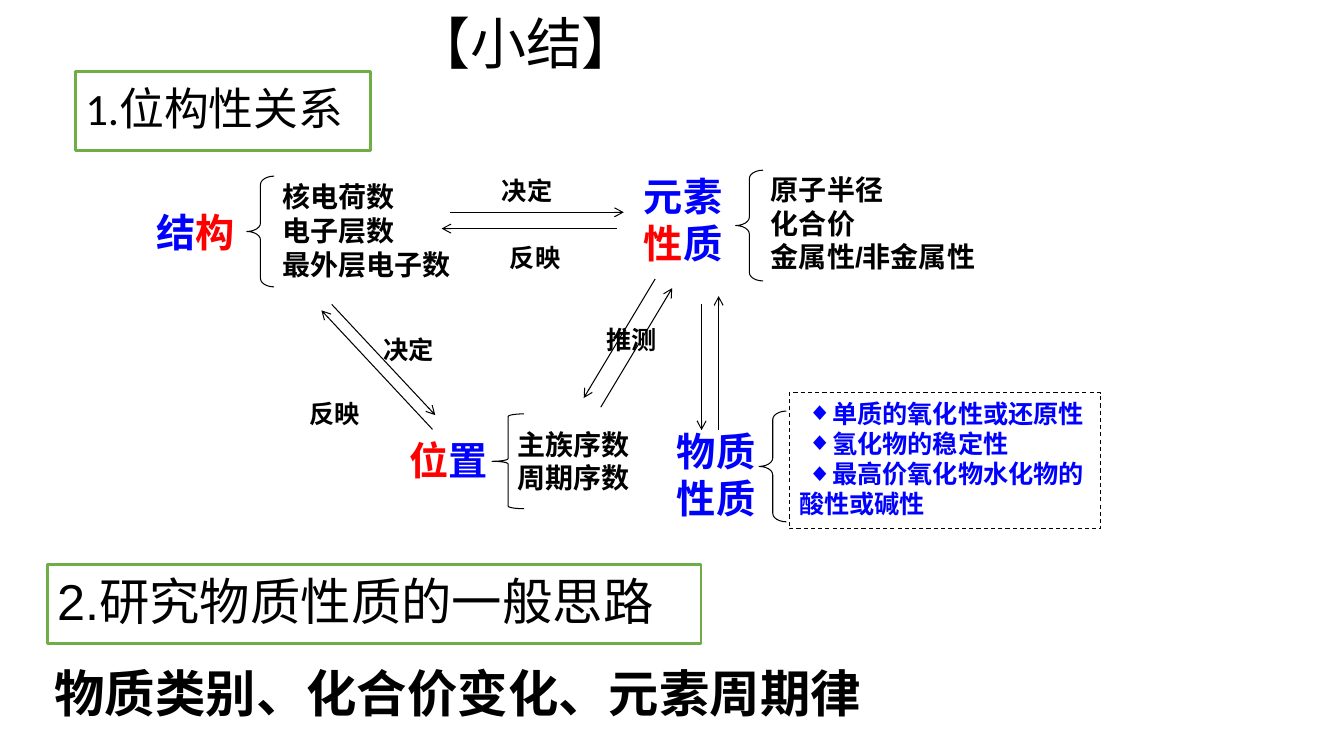
from lxml.etree import SubElement
from pptx import Presentation
from pptx.dml.color import RGBColor
from pptx.enum.dml import MSO_LINE
from pptx.enum.shapes import MSO_CONNECTOR, MSO_SHAPE
from pptx.enum.text import MSO_ANCHOR, MSO_AUTO_SIZE, PP_ALIGN
from pptx.oxml.ns import qn
from pptx.util import Cm, Pt

BLACK, WHITE, BLUE, RED, GREEN = "000000", "FFFFFF", "0000FF", "FF0000", "70AD47"


def rgb(hex_color):
    return RGBColor.from_string(hex_color)


def place(sp, x, y, w, h):
    sp.left, sp.top, sp.width, sp.height = Cm(x), Cm(y), Cm(w), Cm(h)


def write(tf, lines, size, font="Arial", bold=False, spacing=None, align=PP_ALIGN.LEFT):
    """Each line is a list of (text, colour) runs."""
    for i, runs in enumerate(lines):
        p = tf.paragraphs[0] if i == 0 else tf.add_paragraph()
        p.alignment, p.line_spacing = align, spacing
        for text, color in runs:
            r = p.add_run()
            r.text = text
            r.font.size, r.font.name, r.font.bold = Pt(size), font, bold
            r.font.color.rgb = rgb(color)


def text_box(s, x, y, w, h, lines, size, wrap=False):
    tf = s.shapes.add_textbox(Cm(x), Cm(y), Cm(w), Cm(h)).text_frame
    tf.word_wrap = wrap
    write(tf, lines, size, bold=True)


def outline(s, kind, x, y, w, h, color=BLACK, width=0.75):
    sp = s.shapes.add_shape(kind, Cm(x), Cm(y), Cm(w), Cm(h))
    sp.shadow.inherit = False
    sp.fill.background()
    sp.line.color.rgb = rgb(color)
    sp.line.width = Pt(width)
    return sp


def brace(s, x, y, w=0.69, h=2.79, curl=0.31):
    sp = outline(s, MSO_SHAPE.LEFT_BRACE, x, y, w, h)
    sp.adjustments[0] = curl


def arrow(s, x1, y1, x2, y2):
    c = s.shapes.add_connector(MSO_CONNECTOR.STRAIGHT, Cm(x1), Cm(y1), Cm(x2), Cm(y2))
    c.line.color.rgb = rgb(BLACK)
    c.line.width = Pt(0.75)
    SubElement(c.line._get_or_add_ln(), qn("a:tailEnd"), type="arrow")
    SubElement(c._element.spPr, qn("a:effectLst"))


def set_bullet(p, char=None, indent=0):
    pPr = p._p.get_or_add_pPr()
    pPr.set("marL", "0")
    pPr.set("indent", str(indent))
    if char:
        SubElement(pPr, qn("a:buFont"), typeface="Arial")
        SubElement(pPr, qn("a:buChar"), char=char)
    else:
        SubElement(pPr, qn("a:buNone"))


def title(s, x, y, w, h):
    sp = s.shapes.title
    place(sp, x, y, w, h)
    tf = sp.text_frame
    tf.auto_size, tf.vertical_anchor = MSO_AUTO_SIZE.NONE, MSO_ANCHOR.MIDDLE
    write(tf, [[("【小结】", BLACK)]], 40, "Calibri", spacing=0.9, align=PP_ALIGN.RIGHT)


def heading(s, x, y, w, h, text, size, font):
    tf = outline(s, MSO_SHAPE.RECTANGLE, x, y, w, h, GREEN, 2).text_frame
    tf.word_wrap, tf.vertical_anchor = True, MSO_ANCHOR.MIDDLE
    write(tf, [[(text, BLACK)]], size, font, spacing=0.9)


def conclusion(s, x, y, w, h):
    sp = s.placeholders[1]
    place(sp, x, y, w, h)
    tf = sp.text_frame
    tf.auto_size, tf.vertical_anchor = MSO_AUTO_SIZE.NONE, MSO_ANCHOR.TOP
    write(tf, [[("物质类别、化合价变化、元素周期律", BLACK)]], 36, "Noto Sans CJK SC", True, 0.9)
    p = tf.paragraphs[0]
    p.space_before = Pt(10)
    set_bullet(p)


def substance_list(s, x, y, w, h):
    sp = outline(s, MSO_SHAPE.RECTANGLE, x, y, w, h)
    sp.fill.solid()
    sp.fill.fore_color.rgb = rgb(WHITE)
    sp.line.dash_style = MSO_LINE.DASH
    tf = sp.text_frame
    tf.word_wrap, tf.vertical_anchor = True, MSO_ANCHOR.TOP
    items = ["单质的氧化性或还原性", "氢化物的稳定性", "最高价氧化物水化物的酸性或碱性"]
    write(tf, [[(item, BLUE)] for item in items], 18, "Calibri", True)
    for p in tf.paragraphs:
        set_bullet(p, "◆", Cm(0.2))


def relation_map(s, x, y):
    # Concepts
    for dx, dy, w, h, runs, wrap in [
        (6.36, 6.65, 2.51, 1.45, [("位", RED), ("置", BLUE)], False),
        (0, 0.9, 2.51, 1.45, [("结", BLUE), ("构", RED)], False),
        (12.28, 0, 2.92, 2.64, [("元素", BLUE), ("性", RED), ("质", BLUE)], True),
        (13.11, 6.42, 2.84, 2.64, [("物质性质", BLUE)], True),
    ]:
        text_box(s, x + dx, y + dy, w, h, [runs], 28, wrap)

    # Details of each concept
    for dx, dy, w, h, lines, wrap in [
        (3.16, 0.19, 4.83, 2.82, ["核电荷数", "电子层数", "最外层电子数"], False),
        (9.1, 6.42, 4.11, 1.96, ["主族序数", "周期序数"], True),
        (15.48, 0, 5.72, 2.82, ["原子半径", "化合价", "金属性/非金属性"], True),
    ]:
        text_box(s, x + dx, y + dy, w, h, [[(t, BLACK)] for t in lines], 20, wrap)
    substance_list(s, x + 16.19, y + 5.68, 7.85, 3.43)

    # Braces
    for dx, dy in [(2.52, 0.22), (14.84, 0.07), (15.43, 6.14)]:
        brace(s, x + dx, y + dy)
    brace(s, x + 8.7, y + 6.21, 0.81, 2.39, 0.083)

    # Arrows, in opposite pairs
    for x1, y1, x2, y2 in [
        (7.63, 1.13, 12.02, 1.13), (11.84, 1.54, 7.43, 1.54),
        (11.44, 6.04, 13.24, 3.04), (12.81, 2.81, 11.01, 5.81),
        (7.2, 6.6, 4.4, 3.6), (4.66, 3.45, 7.27, 6.24),
        (13.98, 3.45, 13.98, 6.62), (14.41, 6.62, 14.41, 3.24),
    ]:
        arrow(s, x + x1, y + y1, x + x2, y + y2)

    # Arrow labels
    for dx, dy, label in [
        (8.7, 0.07, "决定"), (8.9, 1.77, "反映"), (5.72, 4.08, "决定"),
        (3.84, 5.68, "反映"), (11.34, 3.83, "推测"),
    ]:
        text_box(s, x + dx, y + dy, 1.8, 1.02, [[(label, BLACK)]], 18)


def main():
    prs = Presentation()
    prs.slide_width, prs.slide_height = Cm(33.87), Cm(19.05)
    s = prs.slides.add_slide(prs.slide_layouts[1])
    title(s, 10.06, 0.18, 6.27, 2)
    heading(s, 1.9, 1.8, 7.44, 2, "1.位构性关系", 32, "Calibri")
    relation_map(s, 3.7, 4.22)
    heading(s, 1.19, 14.22, 16.48, 2, "2.研究物质性质的一般思路", 36, "Arial")
    conclusion(s, 1.12, 16.74, 22.94, 1.75)
    prs.save("out.pptx")


if __name__ == "__main__":
    main()
